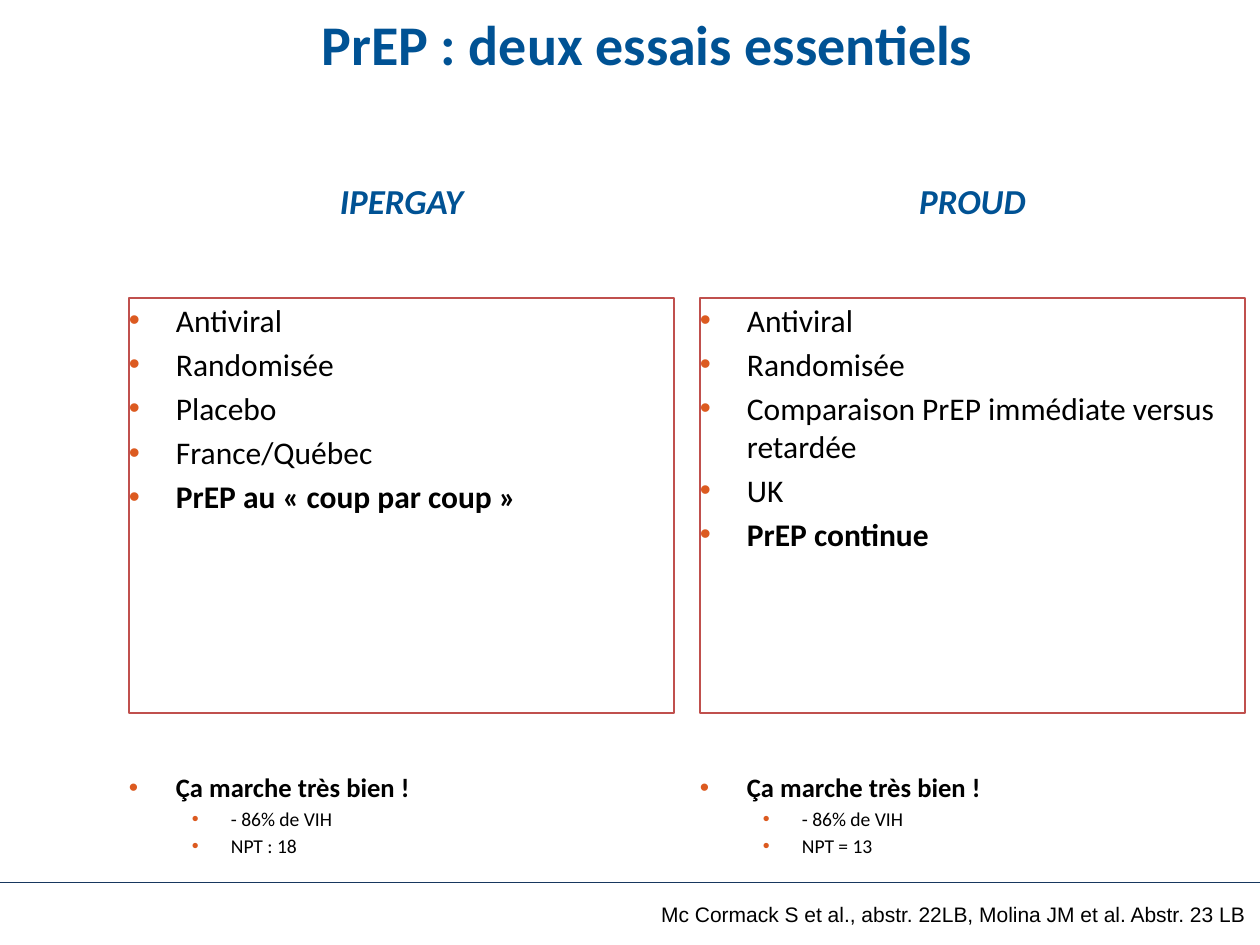
from dataclasses import dataclass

from lxml.etree import SubElement
from pptx import Presentation
from pptx.dml.color import RGBColor
from pptx.enum.shapes import MSO_CONNECTOR
from pptx.enum.text import MSO_ANCHOR, MSO_AUTO_SIZE, PP_ALIGN
from pptx.oxml.ns import qn
from pptx.util import Emu, Pt

EMU_PER_PX = 914400 // 126
BLUE, BLACK, ORANGE, RED, NAVY = "005294", "000000", "DC5A20", "C0504D", "17375E"
COLUMN_WIDTH = 545
HEADING_FORMAT = {"size": Pt(20), "bold": True, "italic": True}
CRITERION_FORMAT = {"size": Pt(18), "bold": False}
RESULT_FORMAT = {"size": Pt(15.2), "bold": True}
DETAIL_FORMAT = {"size": Pt(11.2), "bold": False}


@dataclass
class Trial:
    name: str
    left: int
    heading_index: int
    criteria_index: int
    criteria: list[str]
    regimen: str
    details: list[str]


@dataclass
class Bullet:
    text: str
    font_format: dict
    level: int = 0


TRIALS = [
    Trial("IPERGAY", 129, 1, 2,
          ["Antiviral", "Randomisée", "Placebo", "France/Québec"],
          "PrEP au «\u00a0coup par coup\u00a0»", ["- 86% de VIH", "NPT : 18"]),
    Trial("PROUD", 700, 3, 4,
          ["Antiviral", "Randomisée", "Comparaison PrEP immédiate versus retardée", "UK"],
          "PrEP continue", ["- 86% de VIH", "NPT = 13"]),
]


def px(value: int) -> Emu:
    return Emu(value * EMU_PER_PX)


def color(hex_value: str) -> RGBColor:
    return RGBColor.from_string(hex_value)


def place(shape, left: int, top: int, width: int, height: int) -> None:
    shape.left, shape.top, shape.width, shape.height = map(px, (left, top, width, height))


def prepare_frame(shape, anchor=MSO_ANCHOR.TOP, top_inset: int = 0):
    frame = shape.text_frame
    settings = {"word_wrap": True, "auto_size": MSO_AUTO_SIZE.NONE, "vertical_anchor": anchor,
                "margin_left": 0, "margin_right": 0, "margin_top": px(top_inset),
                "margin_bottom": 0}
    for name, value in settings.items():
        setattr(frame, name, value)
    return frame


def format_font(paragraph, font_format: dict, hex_value: str, typeface: str = "Calibri") -> None:
    for name, value in {"name": typeface, **font_format}.items():
        setattr(paragraph.font, name, value)
    paragraph.font.color.rgb = color(hex_value)


def add_bullet_mark(paragraph, level: int) -> None:
    margin, hanging = ((47, 47), (102, 39))[level]
    properties = paragraph._p.get_or_add_pPr()
    properties.set("marL", str(px(margin)))
    properties.set("indent", str(-px(hanging)))
    bullet_color = SubElement(properties, qn("a:buClr"))
    SubElement(bullet_color, qn("a:srgbClr"), val=ORANGE)
    SubElement(properties, qn("a:buFont"), typeface="Arial")
    SubElement(properties, qn("a:buChar"), char="•")


def write_bullets(frame, bullets: list[Bullet]) -> None:
    for position, bullet in enumerate(bullets):
        paragraph = frame.add_paragraph() if position else frame.paragraphs[0]
        paragraph.text = bullet.text
        paragraph.level = bullet.level
        add_bullet_mark(paragraph, bullet.level)
        paragraph.space_before = Pt(round(bullet.font_format["size"].pt * 0.2, 1) if position else 0)
        format_font(paragraph, bullet.font_format, BLACK)


def write_line(frame, text: str, alignment, font_format: dict, hex_value: str,
               typeface: str = "Calibri"):
    paragraph = frame.paragraphs[0]
    paragraph.text = text
    paragraph.alignment = alignment
    paragraph.space_before = Pt(0)
    format_font(paragraph, font_format, hex_value, typeface)
    return paragraph


def draw_trial(slide, trial: Trial) -> None:
    heading = slide.placeholders[trial.heading_index]
    place(heading, trial.left, 175, COLUMN_WIDTH, 87)
    write_line(prepare_frame(heading, top_inset=4), trial.name, PP_ALIGN.CENTER,
               HEADING_FORMAT, BLUE)

    criteria = slide.placeholders[trial.criteria_index]
    place(criteria, trial.left, 298, COLUMN_WIDTH, 415)
    criteria.line.color.rgb = color(RED)
    criteria.line.width = Pt(0.75)
    bullets = [Bullet(text, CRITERION_FORMAT) for text in trial.criteria]
    bullets.append(Bullet(trial.regimen, {**CRITERION_FORMAT, "bold": True}))
    write_bullets(prepare_frame(criteria, top_inset=3), bullets)

    results = slide.shapes.add_textbox(*map(px, (trial.left, 770, COLUMN_WIDTH, 73)))
    bullets = [Bullet("Ça marche très bien !", RESULT_FORMAT)]
    bullets += [Bullet(text, DETAIL_FORMAT, 1) for text in trial.details]
    write_bullets(prepare_frame(results, top_inset=1), bullets)


def draw_footer(slide) -> None:
    rule = slide.shapes.add_connector(MSO_CONNECTOR.STRAIGHT, px(0), px(882), px(1260), px(882))
    rule.line.color.rgb = color(NAVY)
    rule.line.width = Pt(0.25)
    SubElement(rule._element.spPr, qn("a:effectLst"))

    sources = slide.shapes.add_textbox(*map(px, (445, 882, 801, 64)))
    write_line(prepare_frame(sources, MSO_ANCHOR.MIDDLE),
               "Mc Cormack S et al., abstr. 22LB, Molina JM et al. Abstr. 23 LB",
               PP_ALIGN.RIGHT, {"size": Pt(12)}, BLACK, "Arial")


def main() -> None:
    presentation = Presentation()
    presentation.slide_width, presentation.slide_height = px(1260), px(945)
    comparison_layout = presentation.slide_layouts[4]
    slide = presentation.slides.add_slide(comparison_layout)

    title = slide.shapes.title
    place(title, 129, 16, 1037, 83)
    paragraph = write_line(prepare_frame(title, MSO_ANCHOR.MIDDLE),
                           "PrEP : deux essais essentiels", PP_ALIGN.CENTER,
                           {"size": Pt(32), "bold": True}, BLUE)
    paragraph.line_spacing = Pt(22)

    for trial in TRIALS:
        draw_trial(slide, trial)
    draw_footer(slide)
    presentation.save("out.pptx")


if __name__ == "__main__":
    main()
